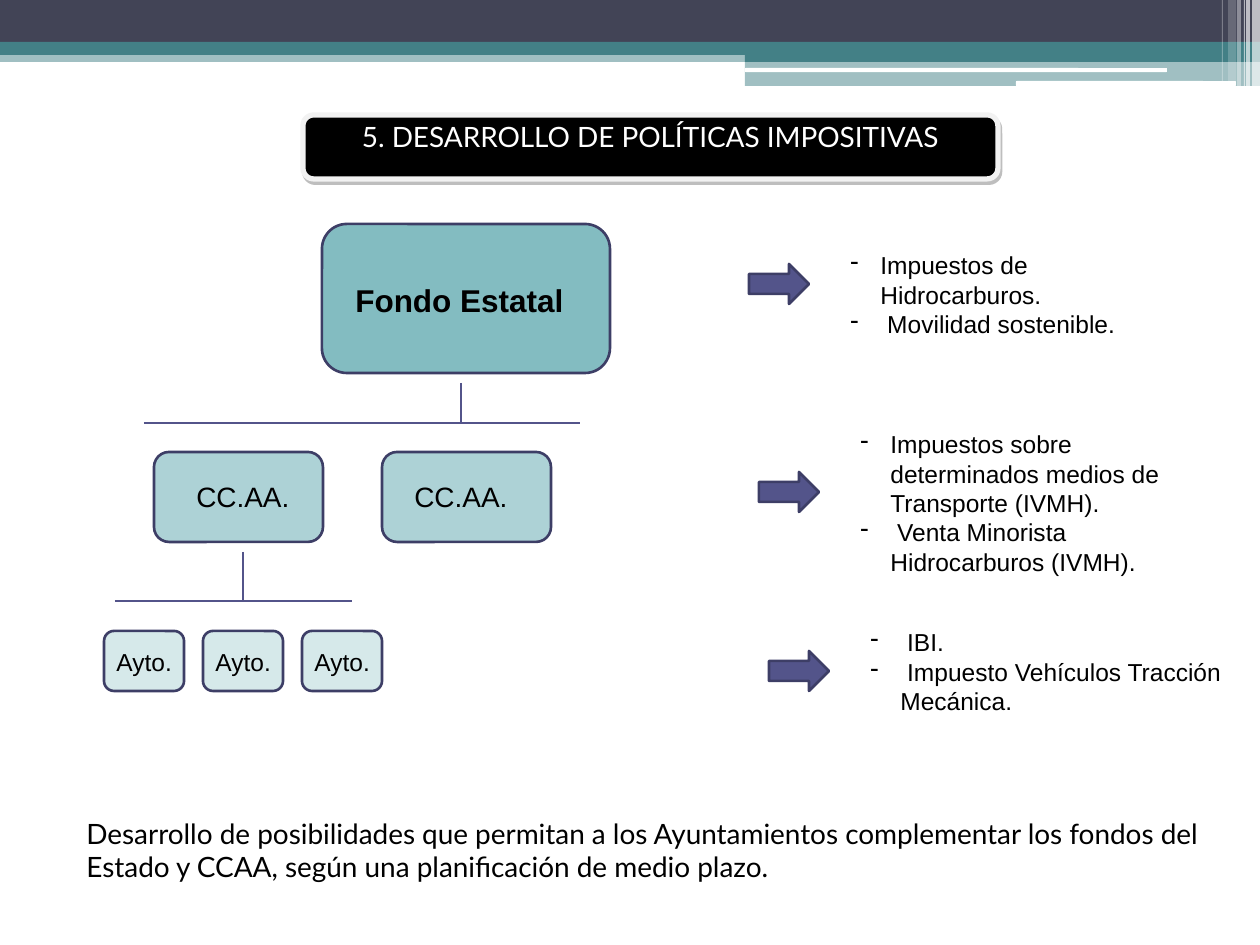
from lxml import etree
from pptx import Presentation
from pptx.dml.color import RGBColor
from pptx.enum.shapes import MSO_CONNECTOR, MSO_SHAPE
from pptx.enum.text import MSO_ANCHOR, PP_ALIGN
from pptx.oxml.ns import qn
from pptx.util import Emu, Pt

PX = 914400 / 126
RECT = MSO_SHAPE.RECTANGLE
ROUNDED = MSO_SHAPE.ROUNDED_RECTANGLE
ARROW = MSO_SHAPE.RIGHT_ARROW
STRAIGHT = MSO_CONNECTOR.STRAIGHT
CENTER = PP_ALIGN.CENTER
TOP = MSO_ANCHOR.TOP

BLACK, WHITE = "000000", "FFFFFF"
SLATE, TEAL = "424456", "438086"
INDIGO, OUTLINE = "53548A", "3D3E66"
STATE, REGION, TOWN = "83BCC1", "ADD2D6", "D6E9EA"


def px(length):
    return Emu(round(length * PX))


def rgb(hex_string):
    return RGBColor.from_string(hex_string)


class SlideBuilder:
    """Draws elements on one slide; boxes are (left, top, width, height) in px."""
    font = "Arial"
    heading_font = "Lato"

    def __init__(self, slide):
        self.slide = slide

    def shape(self, kind, box, fill, line=None, width=1.5, opacity=100):
        shape = self.slide.shapes.add_shape(kind, *map(px, box))
        shape.shadow.inherit = False
        shape.fill.solid()
        shape.fill.fore_color.rgb = rgb(fill)
        if opacity < 100:
            color = shape._element.spPr.find(".//" + qn("a:srgbClr"))
            etree.SubElement(color, qn("a:alpha"), val=str(opacity * 1000))
        if line:
            shape.line.color.rgb = rgb(line)
            shape.line.width = Pt(width)
        else:
            shape.line.fill.background()
        return shape

    def hard_shadow(self, shape, color, opacity, distance, angle):
        effects = shape._element.spPr.find(qn("a:effectLst"))
        shadow = etree.SubElement(
            effects, qn("a:outerShdw"), blurRad="0", dist=str(Pt(distance)),
            dir=str(angle * 60000), algn="ctr", rotWithShape="0")
        tint = etree.SubElement(shadow, qn("a:srgbClr"), val=color)
        etree.SubElement(tint, qn("a:alpha"), val=str(opacity * 1000))

    def span(self, para, text, size, font=None, color=BLACK, bold=False):
        span = para.add_run()
        span.text = text
        span.font.size = Pt(size)
        span.font.name = font or self.font
        span.font.color.rgb = rgb(color)
        span.font.bold = bold

    def frame(self, box):
        frame = self.slide.shapes.add_textbox(*map(px, box)).text_frame
        frame.word_wrap = True
        return frame

    def text(self, box, text, size, **style):
        self.span(self.frame(box).paragraphs[0], text, size, **style)

    def bullets(self, box, items, size=14, indent=30):
        frame = self.frame(box)
        for index, item in enumerate(items):
            para = frame.add_paragraph() if index else frame.paragraphs[0]
            properties = para._p.get_or_add_pPr()
            properties.set("marL", str(px(indent)))
            properties.set("indent", str(-px(indent)))
            etree.SubElement(properties, qn("a:buChar"), char="-")
            self.span(para, item, size)

    def title(self, box, text):
        banner = self.shape(ROUNDED, box, BLACK, "F2F2F2", 3)
        self.hard_shadow(banner, "7F7F7F", 50, 2.2, 63)
        frame = banner.text_frame
        frame.word_wrap = True
        frame.vertical_anchor = TOP
        frame.margin_top = px(2)
        para = frame.paragraphs[0]
        para.alignment = CENTER
        para.space_before, para.space_after = Pt(5), Pt(15)
        self.span(para, text, 16, self.heading_font, WHITE)

    def line(self, x1, y1, x2, y2):
        line = self.slide.shapes.add_connector(
            STRAIGHT, *map(px, (x1, y1, x2, y2)))
        line.line.color.rgb = rgb(INDIGO)
        line.line.width = Pt(0.75)
        etree.SubElement(line._element.spPr, qn("a:effectLst"))


def draw_header(builder):
    bands = [
        (RECT, (0, 50, 1260, 12), TEAL, 50),
        (RECT, (0, 0, 1260, 42), SLATE, 100),
        (RECT, (0, 42, 1260, 13), TEAL, 100),
        (RECT, (745, 49, 515, 13), TEAL, 100),
        (RECT, (745, 62, 515, 24), TEAL, 50),
        (ROUNDED, (745, 68, 422, 4), WHITE, 100),
        (ROUNDED, (1016, 81, 220, 5), WHITE, 100),
    ]
    for kind, box, color, opacity in bands:
        builder.shape(kind, box, color, opacity=opacity)
    stripes = [(1252, 8, 86, 65), (1246, 4, 86, 65), (1244, 1, 86, 60),
               (1237, 4, 86, 40), (1228, 8, 81, 20), (1222, 1, 81, 30)]
    for left, width, height, opacity in stripes:
        builder.shape(RECT, (left, 0, width, height), WHITE, opacity=opacity)


def draw_hierarchy(builder):
    builder.shape(ROUNDED, (322, 224, 288, 149), STATE, OUTLINE)
    builder.text((343, 275, 258, 50), "Fondo Estatal", 18, bold=True)
    for left, text_left in ((154, 184), (382, 402)):
        builder.shape(ROUNDED, (left, 452, 169, 90), REGION, OUTLINE)
        builder.text((text_left, 473, 129, 47), "CC.AA.", 16)
    for left in range(104, 303, 99):
        builder.shape(ROUNDED, (left, 631, 80, 60), TOWN, OUTLINE)
        builder.text((left, 641, 118, 43), "Ayto.", 14)
    for ends in ((144, 423, 580, 423), (115, 601, 352, 601),
                 (243, 552, 243, 601), (461, 383, 461, 423)):
        builder.line(*ends)


def draw_taxes(builder):
    levels = [
        (264, 244, 348, 72,
         ["Impuestos de Hidrocarburos.", " Movilidad sostenible."]),
        (472, 423, 377, 131,
         ["Impuestos sobre determinados medios de Transporte (IVMH).",
          " Venta Minorista Hidrocarburos (IVMH)."]),
        (651, 621, 377, 131,
         [" IBI.", " Impuesto Vehículos Tracción Mecánica."]),
    ]
    for index, (arrow_top, top, width, height, items) in enumerate(levels):
        shift = 10 * index
        builder.bullets((838 + shift, top, width, height), items)
        builder.shape(ARROW, (749 + shift, arrow_top, 60, 40), INDIGO, OUTLINE)


def main():
    deck = Presentation()
    deck.slide_width, deck.slide_height = px(1260), px(945)
    builder = SlideBuilder(deck.slides.add_slide(deck.slide_layouts[6]))
    draw_header(builder)
    builder.title((303, 115, 695, 64), "5. DESARROLLO DE POLÍTICAS IMPOSITIVAS")
    builder.text(
        (74, 810, 1142, 81),
        "Desarrollo de posibilidades que permitan a los Ayuntamientos "
        "complementar los fondos del Estado y CCAA, según una planificación "
        "de medio plazo.", 16, font=builder.heading_font)
    draw_hierarchy(builder)
    draw_taxes(builder)
    deck.save("out.pptx")


if __name__ == "__main__":
    main()
